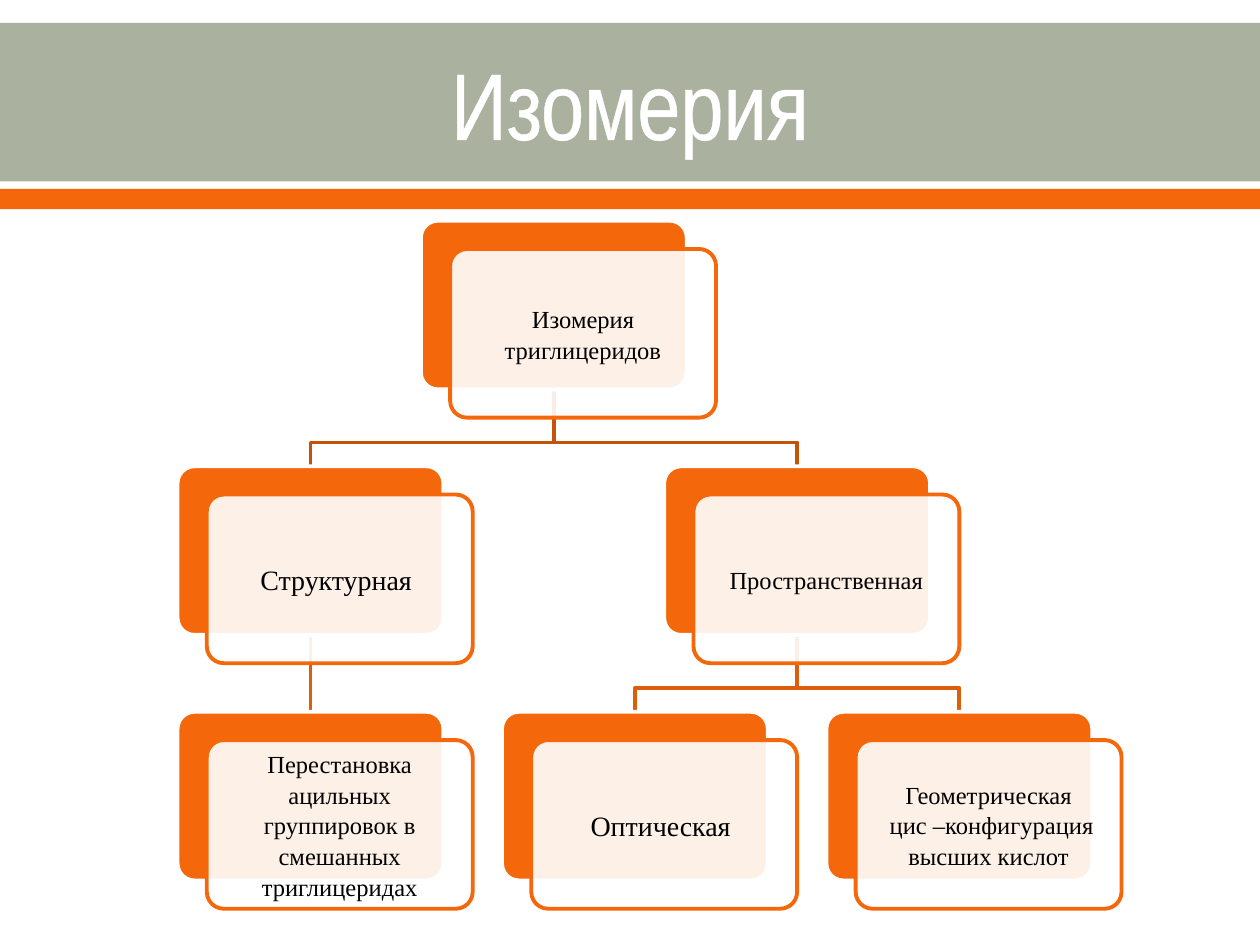
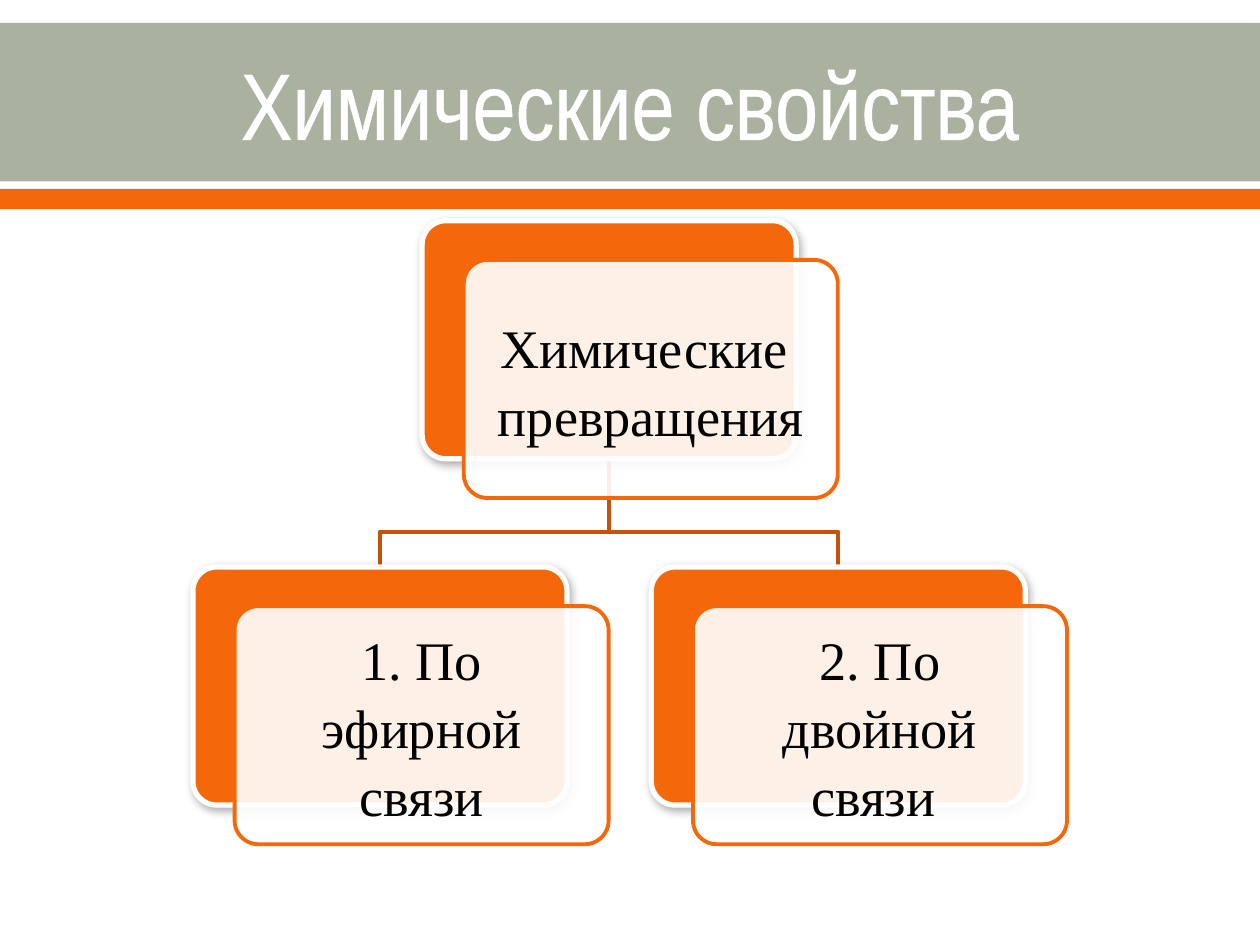
import itertools
from dataclasses import dataclass, field

import lxml.etree
import pptx
import pptx.dml.color
import pptx.enum.shapes
import pptx.enum.text
import pptx.oxml
import pptx.oxml.ns
import pptx.util

Cm = pptx.util.Cm
Pt = pptx.util.Pt
qn = pptx.oxml.ns.qn
SHAPES = pptx.enum.shapes.MSO_SHAPE
NS = 'xmlns:a="http://schemas.openxmlformats.org/drawingml/2006/main"'

ORANGE, SAGE, WHITE, BLACK = "F4680B", "ABB19F", "FFFFFF", "000000"
LINK_COLOURS = ("C35309", "DD5E0A")  # by level of the parent
LINE_WIDTH = 2.22
SHADOW = (
    f'<a:effectLst {NS}><a:outerShdw blurRad="63500" dist="25400" dir="3600000" rotWithShape="0">'
    '<a:srgbClr val="000000"><a:alpha val="30000"/></a:srgbClr></a:outerShdw></a:effectLst>'
)


def rgb(colour):
    return pptx.dml.color.RGBColor.from_string(colour)


@dataclass
class Topic:
    text: str
    size: int
    inset: float
    children: list = field(default_factory=list)


@dataclass
class TreeStyle:
    """Lengths of a tree of cards, in centimetres."""
    left: float
    column_step: float
    row_step: float
    width: float
    height: float
    shift_x: float
    shift_y: float
    bend: float
    plate_line: float = LINE_WIDTH
    plate_shadow: bool = False
    top: float = 4.45


class Deck:
    title_font = "Arial Narrow"
    body_font = "Times New Roman"

    def __init__(self):
        self.presentation = pptx.Presentation()
        self.presentation.slide_width = Cm(25.4)
        self.presentation.slide_height = Cm(19.05)
        self.slide = None

    def start_slide(self, title):
        self.slide = self.presentation.slides.add_slide(self.presentation.slide_layouts[5])
        self.box(SHAPES.RECTANGLE, 0, 0.46, 25.4, 3.2, SAGE)
        self.box(SHAPES.RECTANGLE, 0, 3.81, 25.4, 0.41, ORANGE)
        self.title(title)

    def title(self, text):
        heading = self.slide.shapes.title
        heading.left, heading.top = Cm(1.27), Cm(0.51)
        heading.width, heading.height = Cm(22.86), Cm(3.1)
        self.set_text(heading.text_frame, text, self.title_font, 54, WHITE)
        run = heading.text_frame.paragraphs[0].runs[0]
        run._r.get_or_add_rPr().append(pptx.oxml.parse_xml(
            f'<a:ln {NS} w="13970"><a:solidFill><a:srgbClr val="{WHITE}"/></a:solidFill></a:ln>'))
        self.slide.shapes._spTree.append(heading._element)  # in front of the bands

    def set_text(self, frame, text, font, size, colour):
        frame.text = text
        frame.word_wrap = True
        frame.vertical_anchor = pptx.enum.text.MSO_ANCHOR.MIDDLE
        for paragraph in frame.paragraphs:
            paragraph.alignment = pptx.enum.text.PP_ALIGN.CENTER
            paragraph.font.name = font
            paragraph.font.size = Pt(size)
            paragraph.font.color.rgb = rgb(colour)

    def box(self, kind, left, top, width, height, fill, line=None, line_width=LINE_WIDTH):
        shape = self.slide.shapes.add_shape(kind, Cm(left), Cm(top), Cm(width), Cm(height))
        shape.shadow.inherit = False
        shape.fill.solid()
        shape.fill.fore_color.rgb = rgb(fill)
        if line:
            shape.line.color.rgb = rgb(line)
            shape.line.width = Pt(line_width)
        else:
            shape.line.fill.background()
        return shape

    def card(self, topic, left, top, style):
        """Draw an orange plate with a shifted, nearly opaque text card; return the plate."""
        plate = self.box(SHAPES.ROUNDED_RECTANGLE, left, top, style.width, style.height,
                         ORANGE, WHITE, style.plate_line)
        if style.plate_shadow:
            properties = plate._element.spPr
            properties.replace(properties.find(qn("a:effectLst")), pptx.oxml.parse_xml(SHADOW))
        front = self.box(SHAPES.ROUNDED_RECTANGLE, left + style.shift_x, top + style.shift_y,
                         style.width, style.height, WHITE, ORANGE)
        white = front._element.spPr.find(qn("a:solidFill")).find(qn("a:srgbClr"))
        lxml.etree.SubElement(white, qn("a:alpha"), val="90000")
        plate.adjustments[0] = front.adjustments[0] = 0.1

        frame = front.text_frame
        frame.margin_left = frame.margin_right = Cm(topic.inset)
        frame.margin_top = frame.margin_bottom = Cm(topic.inset)
        self.set_text(frame, topic.text, self.body_font, topic.size, BLACK)
        for paragraph in frame.paragraphs:
            paragraph.line_spacing = 1.05
        return plate

    def link(self, parent, child, colour, bend):
        """Join two plates, behind all cards, bending where they are not in one column."""
        start_x, end_x = (plate.left + plate.width // 2 for plate in (parent, child))
        start_y, end_y = parent.top + parent.height, child.top
        if abs(start_x - end_x) < Cm(0.01):
            line = self.slide.shapes.add_connector(
                pptx.enum.shapes.MSO_CONNECTOR.STRAIGHT, start_x, start_y, end_x, end_y)
            line.begin_connect(parent, 2)
            line.end_connect(child, 0)
        else:
            bend_y = start_y + Cm(bend)
            outline = self.slide.shapes.build_freeform(start_x, start_y)
            outline.add_line_segments(
                [(start_x, bend_y), (end_x, bend_y), (end_x, end_y)], close=False)
            line = outline.convert_to_shape()
            line.fill.background()
            line.shadow.inherit = False
        line.line.color.rgb = rgb(colour)
        line.line.width = Pt(LINE_WIDTH)
        if line.shape_type == pptx.enum.shapes.MSO_SHAPE_TYPE.LINE:
            lxml.etree.SubElement(line._element.spPr, qn("a:effectLst"))
        self.slide.shapes.title._element.addnext(line._element)

    def tree(self, topic, style, level=0, leaf_columns=None):
        """Draw a topic centred over its children; return its column and its plate."""
        leaf_columns = leaf_columns or itertools.count()
        children = [self.tree(child, style, level + 1, leaf_columns) for child in topic.children]
        if children:
            column = sum(child_column for child_column, _ in children) / len(children)
        else:
            column = next(leaf_columns)
        plate = self.card(topic, style.left + column * style.column_step,
                          style.top + level * style.row_step, style)
        for _, child_plate in children:
            self.link(plate, child_plate, LINK_COLOURS[level], style.bend)
        return column, plate


def main():
    deck = Deck()

    deck.start_slide("Изомерия")
    structural = Topic("Структурная ", 16, 0.18, [
        Topic("Перестановка ацильных группировок в смешанных триглицеридах", 14, 0.15),
    ])
    spatial = Topic("Пространственная", 14, 0.15, [
        Topic("Оптическая ", 16, 0.18),
        Topic("Геометрическая\n цис –конфигурация высших кислот", 14, 0.15),
    ])
    deck.tree(
        Topic("Изомерия триглицеридов", 14, 0.15, [structural, spatial]),
        TreeStyle(left=3.58, column_step=6.54, row_step=4.95, width=5.36, height=3.4,
                  shift_x=0.59, shift_y=0.57, bend=1.07))

    deck.start_slide("Химические свойства")
    reactions = [Topic(text, 31, 0.33) for text in ("1. По эфирной связи", "2. По двойной связи ")]
    deck.tree(
        Topic("Химические \nпревращения", 31, 0.33, reactions),
        TreeStyle(left=3.89, column_step=9.24, row_step=6.98, width=7.54, height=4.8,
                  shift_x=0.84, shift_y=0.79, bend=1.47, plate_line=3, plate_shadow=True))

    deck.presentation.save("out.pptx")


if __name__ == "__main__":
    main()
